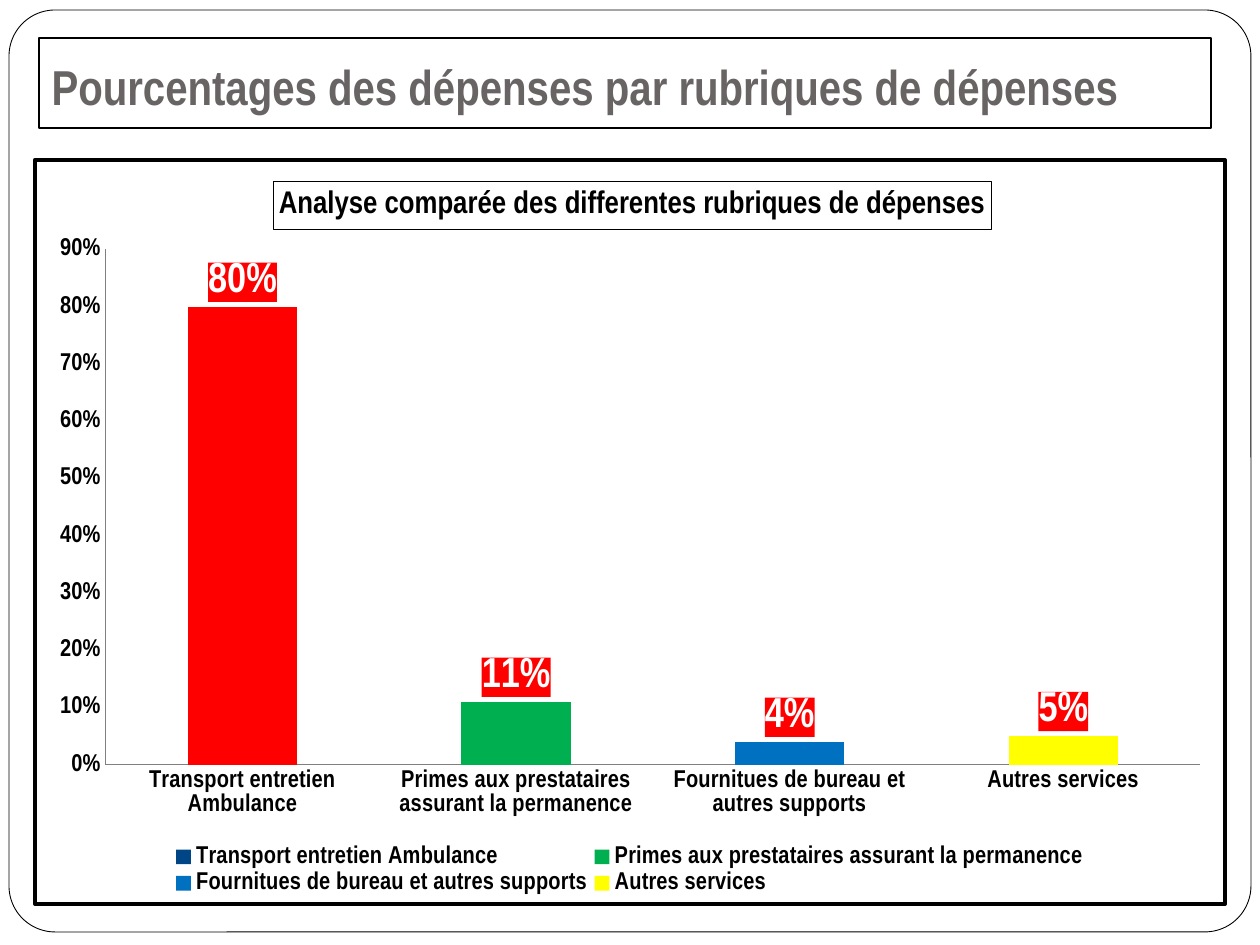
"""Build a slide with a framed title and a column chart of spending shares."""
import pptx
import pptx.chart.data
import pptx.dml.color
import pptx.enum.chart
import pptx.enum.shapes
import pptx.enum.text
import pptx.oxml
import pptx.oxml.ns
import pptx.util

TITLE = "Pourcentages des dépenses par rubriques de dépenses"
HEAD = "Analyse comparée des differentes rubriques de dépenses"
SERIES = "Pourcentages"
ITEMS = [
    ("Transport entretien Ambulance", 0.80, "red"),
    ("Primes aux prestataires assurant la permanence", 0.11, "green"),
    ("Fournitues de bureau et autres supports", 0.04, "blue"),
    ("Autres services", 0.05, "yellow"),
]
COLORS = {
    "red": "FF0000", "green": "00B050", "blue": "0070C0", "yellow": "FFFF00",
    "black": "000000", "white": "FFFFFF", "text": "696464", "axis": "808080",
}
FONT = "Arial Narrow"
FRAME = (9, 10, 1242, 922)
BANNER = (39, 38, 1172, 90)
CHART = (33, 158, 1194, 748)
PLOT = (104, 248, 1098, 518)
LEGEND = (168, 844, 924, 56)
HEADING = (272, 180)


def emu(px):
    return round(px * 914400 / 126)


def place(box):
    return [emu(px) for px in box]


def rgb(name):
    return pptx.dml.color.RGBColor.from_string(COLORS[name])


def fill(obj, name):
    obj.fill.solid()
    obj.fill.fore_color.rgb = rgb(name)


def edge(line, name, size):
    line.color.rgb = rgb(name)
    line.width = pptx.util.Pt(size)


def style(font, size, name="black", bold=True, face=FONT):
    font.size = pptx.util.Pt(size)
    font.bold = bold
    font.name = face
    font.color.rgb = rgb(name)


def xml(text):
    head, tail = text.split(">", 1)
    if head.endswith("/"):
        head, tail = head[:-1], f"</{head[1:-1]}>"
    return pptx.oxml.parse_xml(f"{head} {pptx.oxml.ns.nsdecls('a', 'c')}>{tail}")


def solid(name):
    return f'<a:solidFill><a:srgbClr val="{COLORS[name]}"/></a:solidFill>'


def layout(node, box, index, inner=False):
    for old in node.xpath("c:layout"):
        node.remove(old)
    keys = "xywh"[:len(box)]
    left, top, wide, high = CHART
    parts = [(box[0] - left) / wide, (box[1] - top) / high]
    parts += [size / total for size, total in zip(box[2:], (wide, high))]
    body = '<c:layoutTarget val="inner"/>' if inner else ""
    body += "".join(f'<c:{key}Mode val="edge"/>' for key in "xy")
    body += "".join(f'<c:{key} val="{part:.4f}"/>' for key, part in zip(keys, parts))
    node.insert(index, xml(f"<c:layout><c:manualLayout>{body}</c:manualLayout></c:layout>"))


def draw_frame(slide):
    kind = pptx.enum.shapes.MSO_SHAPE.ROUNDED_RECTANGLE
    frame = slide.shapes.add_shape(kind, *place(FRAME))
    frame.adjustments[0] = 0.05
    frame.shadow.inherit = False
    fill(frame, "white")
    edge(frame.line, "black", 0.5)
    slide.shapes.title.element.addprevious(frame.element)


def draw_title(slide):
    title = slide.shapes.title
    title.left, title.top, title.width, title.height = place(BANNER)
    edge(title.line, "black", 1.5)
    frame = title.text_frame
    frame.text = TITLE
    frame.word_wrap = True
    frame.auto_size = pptx.enum.text.MSO_AUTO_SIZE.NONE
    frame.vertical_anchor = pptx.enum.text.MSO_ANCHOR.BOTTOM
    frame.margin_bottom = pptx.util.Inches(0.1)
    par = frame.paragraphs[0]
    par.alignment = pptx.enum.text.PP_ALIGN.LEFT
    style(par.font, 28, "text")


def draw_chart(slide):
    enum = pptx.enum.chart
    data = pptx.chart.data.CategoryChartData(number_format="0%")
    data.categories = [item[0] for item in ITEMS]
    data.add_series(SERIES, [item[1] for item in ITEMS])
    kind = enum.XL_CHART_TYPE.COLUMN_CLUSTERED
    chart = slide.shapes.add_chart(kind, *place(CHART), data).chart
    style(chart.font, 10, bold=False, face="Times New Roman")

    chart.has_title = True
    head = chart.chart_title
    head.text_frame.text = HEAD
    style(head.text_frame.paragraphs[0].font, 18)
    edge(head.format.line, "black", 0.5)

    for axis in (chart.category_axis, chart.value_axis):
        axis.major_tick_mark = enum.XL_TICK_MARK.NONE
        axis.minor_tick_mark = enum.XL_TICK_MARK.NONE
        axis.has_major_gridlines = False
        style(axis.tick_labels.font, 14)
        edge(axis.format.line, "axis", 0.75)
    scale = chart.value_axis
    scale.minimum_scale, scale.maximum_scale, scale.major_unit = 0, 0.9, 0.1
    scale.tick_labels.number_format = "0%"
    scale.tick_labels.number_format_is_linked = False

    plot = chart.plots[0]
    plot.vary_by_categories = True
    plot.gap_width = 150
    bars = plot.series[0]
    bars.invert_if_negative = False
    fill(bars.format, ITEMS[0][2])
    for index, item in enumerate(ITEMS[1:], 1):
        fill(bars.points[index].format, item[2])

    labels = bars.data_labels
    labels.show_value = True
    labels.number_format = "0%"
    labels.number_format_is_linked = False
    labels.position = enum.XL_LABEL_POSITION.OUTSIDE_END
    style(labels.font, 24, "white")
    root = chart.element
    text = root.xpath(".//c:ser/c:dLbls/c:txPr")[0]
    text.addprevious(xml(f"<c:spPr>{solid('red')}</c:spPr>"))

    chart.has_legend = True
    chart.legend.position = enum.XL_LEGEND_POSITION.BOTTOM
    chart.legend.include_in_layout = False
    style(chart.legend.font, 14)

    layout(root.xpath("c:chart/c:title")[0], HEADING, 1)
    layout(root.xpath("c:chart/c:plotArea")[0], PLOT, 0, inner=True)
    layout(root.xpath("c:chart/c:legend")[0], LEGEND, 1)
    width = pptx.util.Pt(2.25)
    border = f'<a:ln w="{width}">{solid("black")}</a:ln>'
    root.xpath("c:chart")[0].addnext(xml(f"<c:spPr><a:noFill/>{border}</c:spPr>"))


def main():
    deck = pptx.Presentation()
    deck.slide_width = pptx.util.Inches(10)
    deck.slide_height = pptx.util.Inches(7.5)
    slide = deck.slides.add_slide(deck.slide_layouts[5])
    draw_frame(slide)
    draw_title(slide)
    draw_chart(slide)
    deck.save("out.pptx")


if __name__ == "__main__":
    main()
